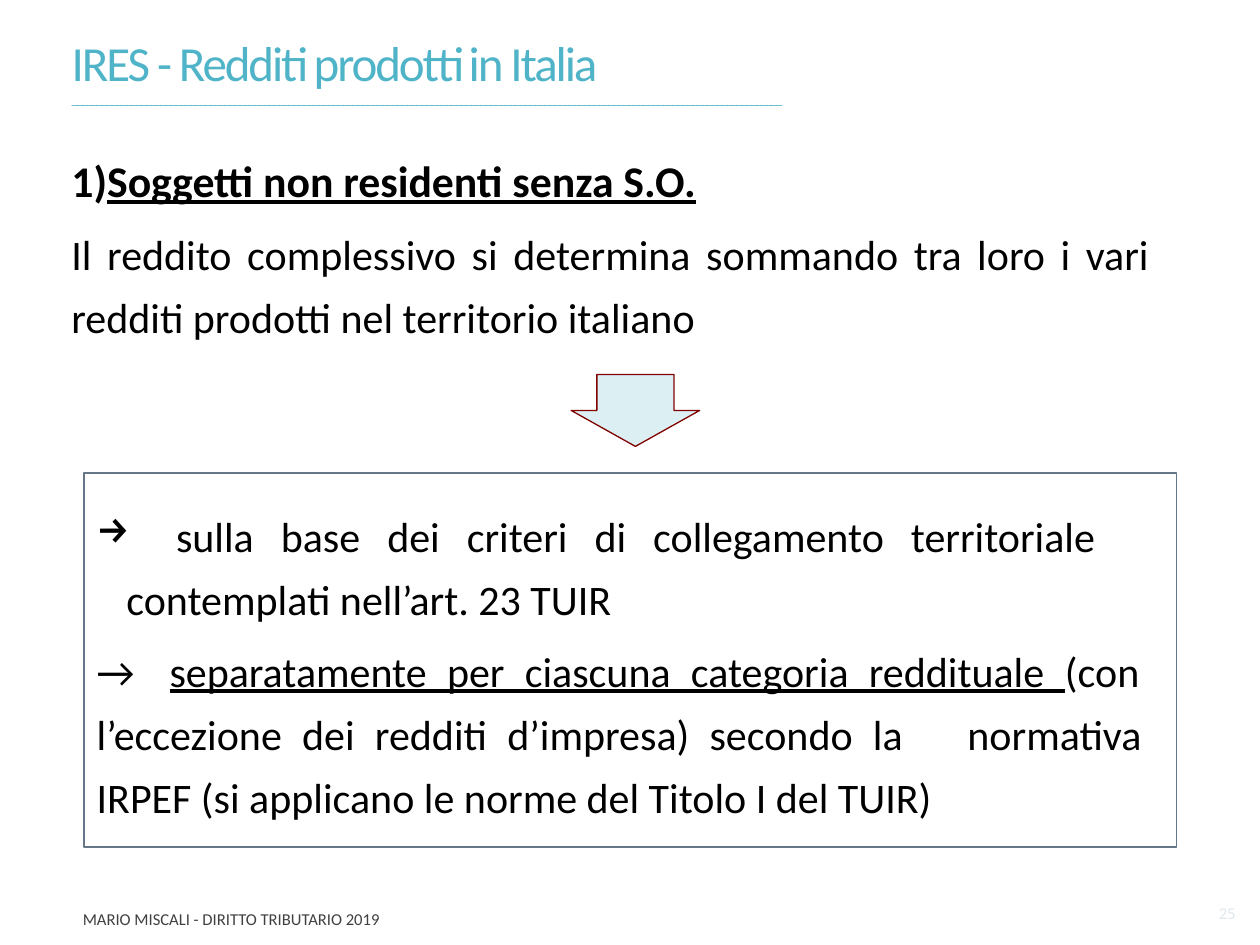
from lxml import etree
from pptx import Presentation
from pptx.dml.color import RGBColor
from pptx.enum.shapes import MSO_SHAPE
from pptx.enum.text import MSO_ANCHOR, PP_ALIGN
from pptx.oxml.ns import qn
from pptx.util import Cm, Pt

LEFT, JUSTIFY = PP_ALIGN.LEFT, PP_ALIGN.JUSTIFY
TOP, MIDDLE = MSO_ANCHOR.TOP, MSO_ANCHOR.MIDDLE
RECTANGLE, DOWN_ARROW = MSO_SHAPE.RECTANGLE, MSO_SHAPE.DOWN_ARROW
FONT = "Calibri"
TITLE_ONLY = 5
TAB_STEP = 1.25


def colour(value):
    return RGBColor.from_string(value)


def add_span(para, text, size=24, ink="000000", bold=False, underline=False, spacing=None):
    span = para.add_run()
    span.text = text
    font = span.font
    font.name, font.size, font.bold, font.underline = FONT, Pt(size), bold, underline
    font.color.rgb = colour(ink)
    if spacing is not None:
        span._r.get_or_add_rPr().set("spc", str(round(spacing * 100)))


def format_para(para, align=LEFT, leading=1.25, before=5):
    para.alignment, para.line_spacing, para.space_before = align, leading, Pt(before)


def add_bullet(para, tag, hanging=0, **attributes):
    properties = para._p.get_or_add_pPr()
    properties.set("marL", str(Cm(hanging)))
    properties.set("indent", str(-Cm(hanging)))
    etree.SubElement(properties, qn(tag), attributes)


def add_tabs(para, stops):
    tabs = etree.SubElement(para._p.get_or_add_pPr(), qn("a:tabLst"))
    for stop in stops:
        etree.SubElement(tabs, qn("a:tab"), pos=str(Cm(stop)), algn="l")


def prepare_frame(shape, anchor=TOP):
    frame = shape.text_frame
    frame.word_wrap, frame.vertical_anchor = True, anchor
    return frame


def add_text_box(page, box, anchor=TOP):
    return prepare_frame(page.shapes.add_textbox(*map(Cm, box)), anchor)


def add_figure(page, kind, box, fill, line, width):
    shape = page.shapes.add_shape(kind, *map(Cm, box))
    shape.shadow.inherit = False
    shape.fill.solid()
    shape.fill.fore_color.rgb = colour(fill)
    shape.line.color.rgb = colour(line)
    shape.line.width = Pt(width)
    return shape


def place_title(page, box):
    title = page.shapes.title
    title.left, title.top, title.width, title.height = map(Cm, box)
    para = prepare_frame(title).paragraphs[0]
    format_para(para, leading=0.9, before=0)
    add_span(para, "IRES - Redditi prodotti in Italia", size=28, ink="50B4C8", spacing=-1.2)
    para.add_line_break()
    add_span(para, "_" * 144, size=8, ink="50B4C8", spacing=-1.2)


def place_premise(page, box):
    frame = add_text_box(page, box)
    heading, body = frame.paragraphs[0], frame.add_paragraph()
    format_para(heading)
    add_bullet(heading, "a:buAutoNum", type="arabicParenR")
    add_span(heading, "Soggetti non residenti senza S.O.", size=25, bold=True, underline=True)
    format_para(body, align=JUSTIFY)
    add_span(body, "Il reddito complessivo si determina sommando tra loro i vari "
                   "redditi prodotti nel territorio italiano")


def place_criteria(page, box):
    left, top, width, height = box
    arrow_width, arrow_height, gap = 2.59, 1.45, 0.53
    arrow_box = (left + (width - arrow_width) / 2 + 0.1, top - gap - arrow_height,
                 arrow_width, arrow_height)
    arrow = add_figure(page, DOWN_ARROW, arrow_box, "DCF0F4", "800000", 0.75)
    arrow.adjustments[0], arrow.adjustments[1] = 0.6, 0.5

    frame = prepare_frame(add_figure(page, RECTANGLE, box, "FFFFFF", "657689", 1), MIDDLE)
    first, second = frame.paragraphs[0], frame.add_paragraph()
    for para in (first, second):
        format_para(para, align=JUSTIFY)
    add_bullet(first, "a:buChar", hanging=0.6, char="→")
    add_tabs(first, [1.6])
    add_span(first, "\tsulla base dei criteri di collegamento territoriale "
                    "\tcontemplati nell’art. 23 TUIR")
    add_tabs(second, [TAB_STEP * step for step in range(1, 18)])
    add_span(second, "→ \t")
    add_span(second, "separatamente per ciascuna categoria reddituale ", underline=True)
    add_span(second, "(con \tl’eccezione dei redditi d’impresa) secondo la \tnormativa "
                     "\tIRPEF (si applicano le norme del Titolo I del TUIR)")


def place_footer(page, box):
    left, top, width, height = box
    note = add_text_box(page, (left, top, 10.46, height), MIDDLE).paragraphs[0]
    add_span(note, "MARIO MISCALI - DIRITTO TRIBUTARIO 2019", size=9.5, ink="404040")
    number_width = 1
    number_box = (left + width - number_width, top - 0.12, number_width, height)
    number = add_text_box(page, number_box, MIDDLE).paragraphs[0]
    add_span(number, "25", size=9.5, ink="E1E8EC")


def main():
    deck = Presentation()
    deck.slide_width, deck.slide_height = Cm(25.4), Cm(19.05)
    page = deck.slides.add_slide(deck.slide_layouts[TITLE_ONLY])
    place_title(page, (1.19, 0.66, 22.45, 3.07))
    place_premise(page, (1.19, 2.72, 22.23, 4.34))
    place_criteria(page, (1.7, 9.53, 22.02, 7.54))
    place_footer(page, (1.42, 18.21, 23.9, 0.64))
    deck.save("out.pptx")


if __name__ == "__main__":
    main()
